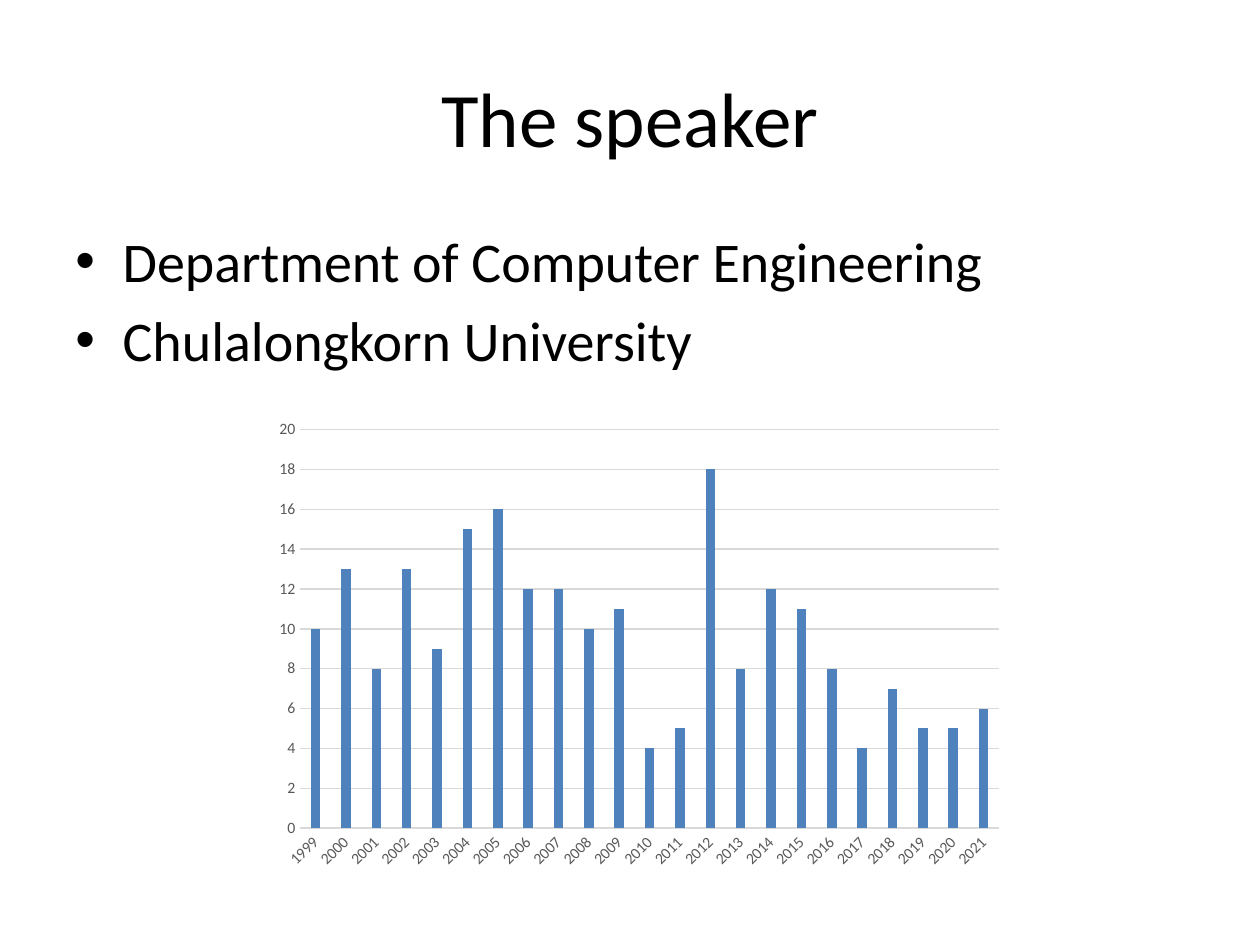
from lxml import etree
from pptx import Presentation
from pptx.chart.data import CategoryChartData
from pptx.dml.color import RGBColor
from pptx.enum.chart import XL_CHART_TYPE, XL_TICK_MARK
from pptx.enum.text import MSO_ANCHOR, PP_ALIGN
from pptx.oxml import parse_xml
from pptx.oxml.ns import nsdecls, qn
from pptx.util import Pt

COLUMNS = XL_CHART_TYPE.COLUMN_CLUSTERED
NO_TICK = XL_TICK_MARK.NONE
TOP, MIDDLE = MSO_ANCHOR.TOP, MSO_ANCHOR.MIDDLE
LEFT, CENTER = PP_ALIGN.LEFT, PP_ALIGN.CENTER

FONT = "Calibri"
BLACK = RGBColor(0x00, 0x00, 0x00)
GREY = RGBColor(0x59, 0x59, 0x59)
PALE = RGBColor(0xD9, 0xD9, 0xD9)
BLUE = RGBColor(0x4F, 0x81, 0xBD)

AFFILIATION = ["Department of Computer Engineering", "Chulalongkorn University"]
YEARS = [str(year) for year in range(1999, 2022)]
COUNTS = [10, 13, 8, 13, 9, 15, 16, 12, 12, 10, 11, 4,
          5, 18, 8, 12, 11, 8, 4, 7, 5, 5, 6]
PLOT = {"x": 0.064, "y": 0.019, "w": 0.924, "h": 0.791}


def set_font(font, size, color):
    """Apply the slide's typeface with a size and colour."""
    font.name = FONT
    font.size = Pt(size)
    font.color.rgb = color


def add_bullet(p):
    """Give a paragraph a hanging round bullet."""
    pPr = p._p.get_or_add_pPr()
    pPr.set("marL", str(Pt(27)))
    pPr.set("indent", str(Pt(-27)))
    etree.SubElement(pPr, qn("a:buFont")).set("typeface", "Arial")
    etree.SubElement(pPr, qn("a:buChar")).set("char", "•")


def add_text(s, box, lines, size, align=LEFT, anchor=TOP, bullets=False):
    """Add a text box with one paragraph per line."""
    tf = s.shapes.add_textbox(*map(Pt, box)).text_frame
    tf.word_wrap = True
    tf.vertical_anchor = anchor
    for i, line in enumerate(lines):
        p = tf.add_paragraph() if i else tf.paragraphs[0]
        p.alignment = align
        if bullets:
            p.space_before = Pt(0.2 * size)
            add_bullet(p)
        r = p.add_run()
        r.text = line
        set_font(r.font, size, BLACK)


def style_axis(axis):
    """Remove tick marks and set the label font."""
    axis.major_tick_mark = axis.minor_tick_mark = NO_TICK
    set_font(axis.tick_labels.font, 9, GREY)


def style_line(line):
    """Draw a thin pale line."""
    line.color.rgb = PALE
    line.width = Pt(0.75)


def set_plot_layout(chart):
    """Place the inner plot area by fractions of the chart."""
    modes = "".join(f'<c:{k}Mode val="edge"/>' for k in "xy")
    sizes = "".join(f'<c:{k} val="{v}"/>' for k, v in PLOT.items())
    layout = parse_xml(
        f'<c:layout {nsdecls("c")}><c:manualLayout><c:layoutTarget val="inner"/>'
        f"{modes}{sizes}</c:manualLayout></c:layout>")
    area = chart._chartSpace.chart.plotArea
    for old in area.findall(qn("c:layout")):
        area.remove(old)
    area.insert(0, layout)


def add_column_chart(s, box):
    """Add the yearly column chart."""
    data = CategoryChartData()
    data.categories = YEARS
    data.add_series("Series 1", COUNTS)
    chart = s.shapes.add_chart(COLUMNS, *map(Pt, box), data).chart
    chart.has_legend = chart.has_title = False
    set_font(chart.font, 10, BLACK)
    set_plot_layout(chart)

    plot = chart.plots[0]
    plot.vary_by_categories = False
    plot.gap_width, plot.overlap = 219, -27
    fill = plot.series[0].format.fill
    fill.solid()
    fill.fore_color.rgb = BLUE

    years, values = chart.category_axis, chart.value_axis
    style_axis(years)
    style_line(years.format.line)
    body = years._element.find(qn("c:txPr")).find(qn("a:bodyPr"))
    body.set("rot", str(-45 * 60000))
    style_axis(values)
    values.minimum_scale, values.maximum_scale, values.major_unit = 0, 20, 2
    values.format.line.fill.background()
    style_line(values.major_gridlines.format.line)


def main():
    """Build the speaker slide."""
    prs = Presentation()
    prs.slide_width, prs.slide_height = Pt(720), Pt(540)
    s = prs.slides.add_slide(prs.slide_layouts[6])
    add_text(s, (36, 21.6, 648, 90), ["The speaker"], 44, CENTER, MIDDLE)
    add_text(s, (36, 126, 648, 356.4), AFFILIATION, 32, bullets=True)
    add_column_chart(s, (144, 240, 432, 288))
    prs.save("out.pptx")


if __name__ == "__main__":
    main()
